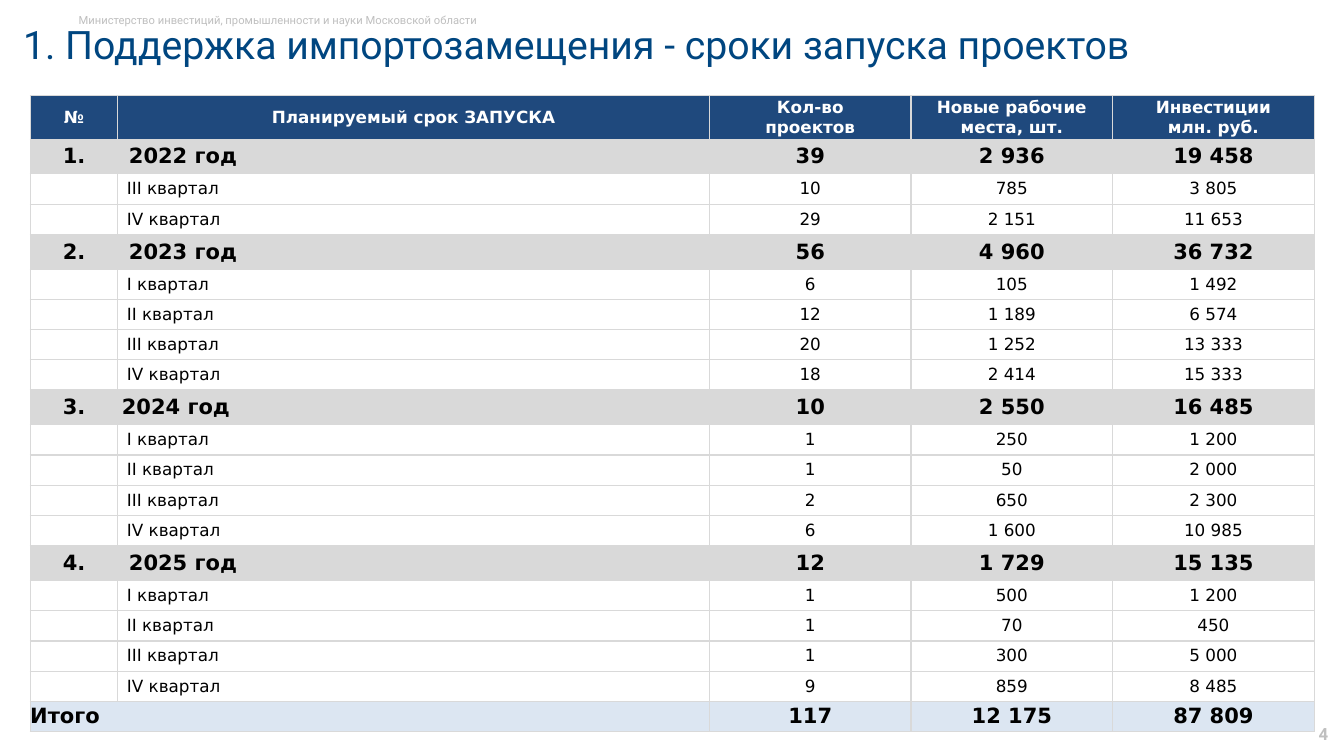
from dataclasses import dataclass

from lxml import etree
from pptx import Presentation
from pptx.dml.color import RGBColor
from pptx.enum.text import MSO_ANCHOR, MSO_AUTO_SIZE, PP_ALIGN
from pptx.oxml.ns import qn
from pptx.util import Pt

PX = 4572
LEFT, CENTER, RIGHT = PP_ALIGN.LEFT, PP_ALIGN.CENTER, PP_ALIGN.RIGHT
TOP, MIDDLE = MSO_ANCHOR.TOP, MSO_ANCHOR.MIDDLE
GROW = MSO_AUTO_SIZE.SHAPE_TO_FIT_TEXT
TITLE_ONLY = 5
NAVY, BLUE, GREY, PALE, MUTED = "1F497D", "004680", "D9D9D9", "DCE6F2", "BFBFBF"
WHITE, BLACK = "FFFFFF", "000000"
COLUMNS = [174, 1174, 400, 400, 400]
HEADERS = ["№", "Планируемый срок ЗАПУСКА", "Кол-во\nпроектов",
           "Новые рабочие места, шт.", "Инвестиции\nмлн. руб."]


@dataclass(frozen=True)
class Style:
    """Character formatting."""
    size: int
    color: str
    bold: bool = False
    font: str = "DejaVu Sans"


@dataclass(frozen=True)
class RowKind:
    """Look of one kind of table row."""
    height: int
    fill: str
    style: Style
    indent: int


@dataclass(frozen=True)
class Label:
    """Text frame placed on the slide."""
    text: str
    box: tuple[int, int, int, int]
    style: Style
    align: PP_ALIGN = LEFT
    anchor: MSO_ANCHOR = TOP
    wrap: bool = True


@dataclass(frozen=True)
class Period:
    """Row of launch figures."""
    kind: RowKind
    number: str
    name: str
    values: tuple[str, str, str]


HEAD = RowKind(86, NAVY, Style(12, WHITE, True), 0)
YEAR = RowKind(69, GREY, Style(15, BLACK, True), 22)
YEAR_FLUSH = RowKind(69, GREY, Style(15, BLACK, True), 8)
QUARTER = RowKind(60, WHITE, Style(12, BLACK), 18)
TOTAL = RowKind(60, PALE, Style(15, BLACK, True), 0)

PERIODS = [
    Period(YEAR, "1.", "2022 год", ("39", "2 936", "19 458")),
    Period(QUARTER, "", "III квартал", ("10", "785", "3 805")),
    Period(QUARTER, "", "IV квартал", ("29", "2 151", "11 653")),
    Period(YEAR, "2.", "2023 год", ("56", "4 960", "36 732")),
    Period(QUARTER, "", "I квартал", ("6", "105", "1 492")),
    Period(QUARTER, "", "II квартал", ("12", "1 189", "6 574")),
    Period(QUARTER, "", "III квартал", ("20", "1 252", "13 333")),
    Period(QUARTER, "", "IV квартал", ("18", "2 414", "15 333")),
    Period(YEAR_FLUSH, "3.", "2024 год", ("10", "2 550", "16 485")),
    Period(QUARTER, "", "I квартал", ("1", "250", "1 200")),
    Period(QUARTER, "", "II квартал", ("1", "50", "2 000")),
    Period(QUARTER, "", "III квартал", ("2", "650", "2 300")),
    Period(QUARTER, "", "IV квартал", ("6", "1 600", "10 985")),
    Period(YEAR, "4.", "2025 год", ("12", "1 729", "15 135")),
    Period(QUARTER, "", "I квартал", ("1", "500", "1 200")),
    Period(QUARTER, "", "II квартал", ("1", "70", "450")),
    Period(QUARTER, "", "III квартал", ("1", "300", "5 000")),
    Period(QUARTER, "", "IV квартал", ("9", "859", "8 485")),
    Period(TOTAL, "Итого", "", ("117", "12 175", "87 809")),
]
TITLE = Label("1. Поддержка импортозамещения - сроки запуска проектов",
              (36, 40, 2570, 114), Style(28, BLUE, font="Roboto"))
LABELS = [
    Label("Министерство инвестиций, промышленности и науки Московской области",
          (146, 16, 1130, 48), Style(8, MUTED, font="Roboto")),
    Label("4", (2600, 1424, 46, 62), Style(12, MUTED, True, "Roboto"),
          RIGHT, MIDDLE, False),
]


def rgb(color: str) -> RGBColor:
    """Turn a hex string into a colour."""
    return RGBColor.from_string(color)


def write(tf, text: str, style: Style, align: PP_ALIGN) -> None:
    """Fill a text frame, one paragraph per line."""
    for i, line in enumerate(text.split("\n")):
        p = tf.add_paragraph() if i else tf.paragraphs[0]
        p.alignment = align
        if not line:
            etree.SubElement(p._p, qn("a:endParaRPr"), sz=str(style.size * 100))
            continue
        r = p.add_run()
        r.text = line
        r.font.size = Pt(style.size)
        r.font.bold = style.bold
        r.font.name = style.font
        r.font.color.rgb = rgb(style.color)


def place(sp, label: Label) -> None:
    """Position a shape and write its label."""
    sp.left, sp.top, sp.width, sp.height = (v * PX for v in label.box)
    tf = sp.text_frame
    tf.word_wrap = label.wrap
    tf.auto_size = GROW
    tf.vertical_anchor = label.anchor
    tf.margin_left = tf.margin_right = tf.margin_top = tf.margin_bottom = 10 * PX
    write(tf, label.text, label.style, label.align)


def format_cell(cell, text: str, kind: RowKind, align: PP_ALIGN, indent: int) -> None:
    """Write, border and fill one table cell."""
    cell.margin_left = indent * PX
    cell.margin_right = cell.margin_top = cell.margin_bottom = 0
    cell.vertical_anchor = MIDDLE
    write(cell.text_frame, text, kind.style, align)
    tc_pr = cell._tc.get_or_add_tcPr()
    for side in ("a:lnL", "a:lnR", "a:lnT", "a:lnB"):
        ln = etree.SubElement(tc_pr, qn(side), w=str(Pt(1)))
        fill = etree.SubElement(ln, qn("a:solidFill"))
        etree.SubElement(fill, qn("a:srgbClr"), val=GREY)
    cell.fill.solid()
    cell.fill.fore_color.rgb = rgb(kind.fill)


def add_launch_table(s) -> None:
    """Add the table of launch periods."""
    rows = [(HEAD, HEADERS)]
    rows += [(d.kind, [d.number, d.name, *d.values]) for d in PERIODS]
    height = sum(kind.height for kind, _ in rows)
    frame = s.shapes.add_table(len(rows), len(COLUMNS), 60 * PX, 190 * PX,
                               sum(COLUMNS) * PX, height * PX)
    table = frame.table
    table.first_row = table.horz_banding = False
    for column, width in zip(table.columns, COLUMNS):
        column.width = width * PX
    for i, (kind, texts) in enumerate(rows):
        table.rows[i].height = kind.height * PX
        for j, text in enumerate(texts):
            is_name = j == 1 and kind is not HEAD
            is_total = j == 0 and kind is TOTAL
            align = LEFT if is_name or is_total else CENTER
            format_cell(table.cell(i, j), text, kind, align,
                        kind.indent if is_name else 0)
    last = len(rows) - 1
    table.cell(last, 0).merge(table.cell(last, 1))


def main() -> None:
    """Build and save the slide."""
    prs = Presentation()
    prs.slide_width, prs.slide_height = 2667 * PX, 1500 * PX
    s = prs.slides.add_slide(prs.slide_layouts[TITLE_ONLY])
    place(s.shapes.title, TITLE)
    s.shapes.title.text_frame.paragraphs[0].line_spacing = 0.9
    for label in LABELS:
        place(s.shapes.add_textbox(0, 0, 0, 0), label)
    add_launch_table(s)
    prs.save("out.pptx")


if __name__ == "__main__":
    main()
